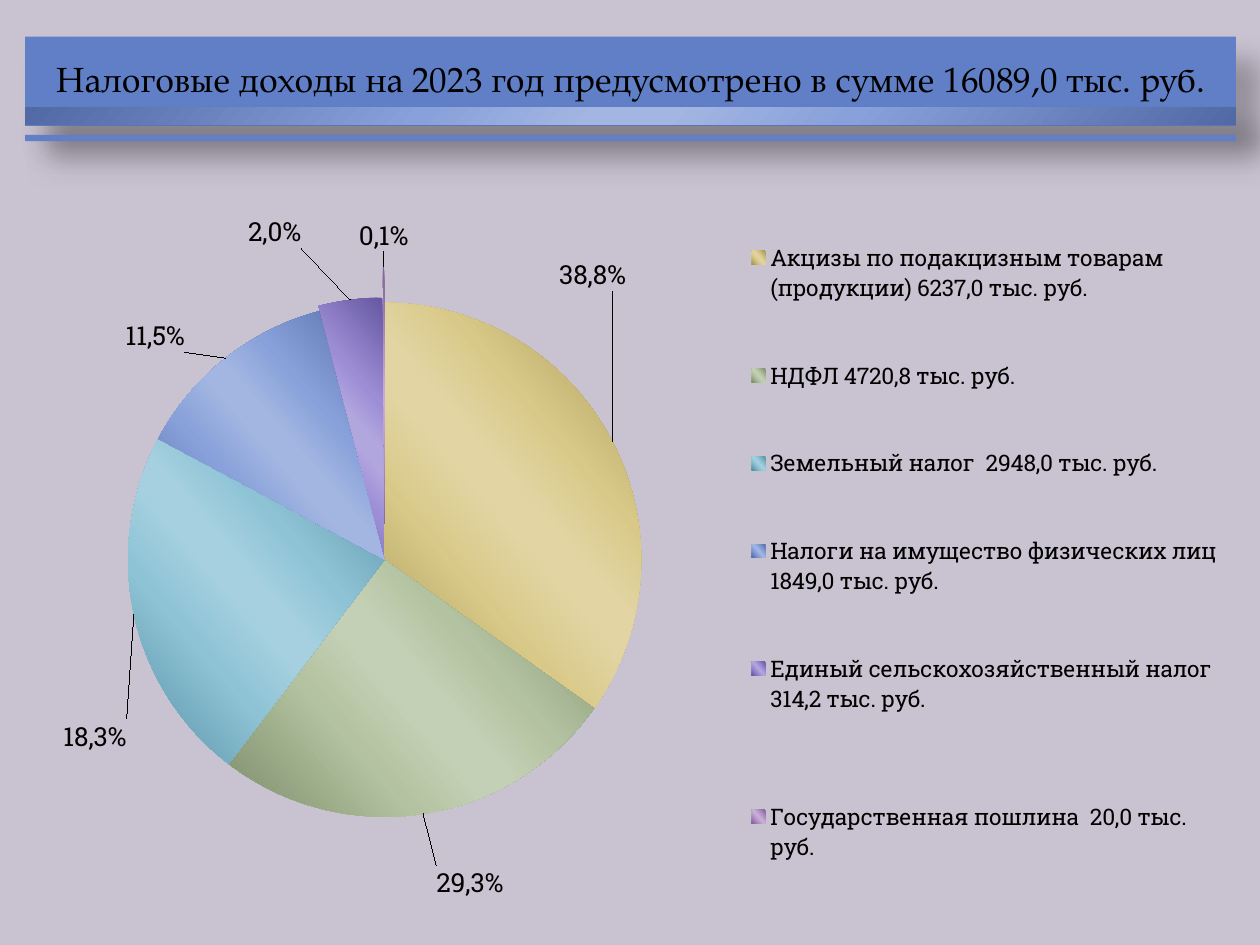
from pptx import Presentation
from pptx.chart.data import CategoryChartData
from pptx.dml.color import RGBColor
from pptx.enum.chart import XL_CHART_TYPE, XL_LABEL_POSITION, XL_LEGEND_POSITION
from pptx.enum.shapes import MSO_SHAPE
from pptx.enum.text import MSO_ANCHOR, PP_ALIGN
from pptx.oxml import parse_xml
from pptx.oxml.ns import nsdecls, qn
from pptx.util import Inches, Pt

SERIF, SLAB = "TeX Gyre Pagella", "Roboto Slab"
BLUE = "607FC6"
TITLE = "Налоговые доходы на 2023 год предусмотрено в сумме 16089,0 тыс. руб."

# category, value, label, colour, explosion %, label shift as a share of the chart
TAXES = [
    ("Акцизы по подакцизным товарам (продукции) 6237,0 тыс. руб.",
     34.8, "38,8%", "CEB966", 0, (-0.05, -0.2)),
    ("НДФЛ 4720,8 тыс. руб.", 25.6, "29,3%", "9CB084", 0, (0.01, 0.06)),
    ("Земельный налог  2948,0 тыс. руб.", 22.4, "18,3%", "6BB1C9", 0, (0, 0.14)),
    ("Налоги на имущество физических лиц 1849,0 тыс. руб.",
     13.1, "11,5%", "6585CF", 0, (-0.03, 0)),
    ("Единый сельскохозяйственный налог 314,2 тыс. руб. \n",
     4, "2,0%", "7E6BC9", 2, (-0.04, -0.06)),
    ("Государственная пошлина  20,0 тыс. руб.", 0.1, "0,1%", "A379BB", 14, (0, -0.01)),
]


def rgb(color):
    return RGBColor.from_string(color)


def mix(color, target, share):
    """Blend a hex colour towards a grey level (0 black, 255 white)."""
    parts = (int(color[i:i + 2], 16) for i in (0, 2, 4))
    return "".join(f"{round(v + (target - v) * share):02X}" for v in parts)


def set_sheen(fill, spPr, color, angle):
    """Fill with a gradient that is dark at both ends and light in the middle."""
    fill.gradient()
    dark, mid, light = mix(color, 0, 0.2), mix(color, 255, 0.23), mix(color, 255, 0.4)
    stops = zip((0, 33, 47, 53, 68, 100), (dark, mid, light, light, mid, dark))
    gs = "".join(f'<a:gs pos="{pos * 1000}"><a:srgbClr val="{c}"/></a:gs>'
                 for pos, c in stops)
    grad = spPr.find(qn("a:gradFill"))
    grad.getparent().replace(grad, parse_xml(
        f'<a:gradFill {nsdecls("a")} rotWithShape="1"><a:gsLst>{gs}</a:gsLst>'
        f'<a:lin ang="{angle * 60000}" scaled="1"/></a:gradFill>'))


def add_bar(slide, left, top, width, height):
    sp = slide.shapes.add_shape(MSO_SHAPE.RECTANGLE, Inches(left), Inches(top),
                                Inches(width), Inches(height))
    sp.fill.solid()
    sp.fill.fore_color.rgb = rgb(BLUE)
    sp.line.fill.background()
    sp._element.spPr.append(parse_xml(
        f'<a:effectLst {nsdecls("a")}><a:outerShdw blurRad="{Pt(15)}" dist="{Pt(18)}" '
        f'dir="{45 * 60000}" rotWithShape="0"><a:srgbClr val="000000">'
        '<a:alpha val="26000"/></a:srgbClr></a:outerShdw></a:effectLst>'))
    return sp


def add_banner(slide, left, top, width, height):
    tf = add_bar(slide, left, top, width, height - 0.12).text_frame
    tf.word_wrap = True
    tf.vertical_anchor = MSO_ANCHOR.MIDDLE
    tf.margin_left = tf.margin_right = tf.margin_top = tf.margin_bottom = Inches(0.08)
    p = tf.paragraphs[0]
    p.text = TITLE
    p.alignment = PP_ALIGN.CENTER
    p.line_spacing = 0.9
    p.font.size, p.font.name, p.font.color.rgb = Pt(20), SERIF, rgb("000000")

    strip = add_bar(slide, left, top + height - 0.27, width, 0.14)
    set_sheen(strip.fill, strip._element.spPr, "6585CF", 41)
    add_bar(slide, left, top + height - 0.05, width, 0.05)


def manual_layout(x, y, w=None, h=None, inner=False):
    """Chart layout; without a size, x and y shift a label from its usual place."""
    tags = []
    if inner:
        tags.append(("layoutTarget", "inner"))
    if w is not None:
        tags += [("xMode", "edge"), ("yMode", "edge")]
    tags += [("x", x), ("y", y)]
    if w is not None:
        tags += [("w", w), ("h", h)]
    body = "".join(f'<c:{tag} val="{val}"/>' for tag, val in tags)
    return parse_xml(f'<c:layout {nsdecls("c")}><c:manualLayout>{body}'
                     '</c:manualLayout></c:layout>')


def set_layout(parent, layout, index):
    for old in parent.findall(qn("c:layout")):
        parent.remove(old)
    parent.insert(index, layout)


def style_slice(series, index, tax):
    _, _, text, color, explosion, shift = tax
    point = series.points[index]
    point.format.line.fill.background()
    spPr = series._element.get_or_add_dPt_for_point(index).find(qn("c:spPr"))
    set_sheen(point.format.fill, spPr, color, 139)
    spPr.addprevious(parse_xml(f'<c:explosion {nsdecls("c")} val="{explosion}"/>'))

    label = point.data_label
    p = label.text_frame.paragraphs[0]
    p.text = text
    p.font.size, p.font.name, p.font.color.rgb = Pt(15), SLAB, rgb("000000")
    label.position = XL_LABEL_POSITION.OUTSIDE_END
    set_layout(label._dLbl, manual_layout(*shift), 1)


def add_tax_pie(slide, left, top, width, height):
    data = CategoryChartData()
    data.categories = [tax[0] for tax in TAXES]
    data.add_series("Series 1", [tax[1] for tax in TAXES])
    chart = slide.shapes.add_chart(XL_CHART_TYPE.PIE, Inches(left), Inches(top),
                                   Inches(width), Inches(height), data).chart
    chart.has_title = False
    chart.font.size, chart.font.name = Pt(18), SERIF
    chart.font.color.rgb = rgb("000000")

    chart.has_legend = True
    legend = chart.legend
    legend.position = XL_LEGEND_POSITION.RIGHT
    legend.include_in_layout = False
    legend.font.size, legend.font.name = Pt(13), SLAB
    legend.font.color.rgb = rgb("000000")
    set_layout(legend._element, manual_layout(0.6, 0, 0.4, 1), 1)

    plot = chart.plots[0]
    plot.vary_by_categories = True
    set_layout(plot._element.getparent(),
               manual_layout(0.08, 0.16, 0.44, 0.7, inner=True), 0)
    series = plot.series[0]
    labels = series.data_labels
    labels.show_value = True
    labels.number_format, labels.number_format_is_linked = "0.0%", False
    labels.position = XL_LABEL_POSITION.OUTSIDE_END
    labels.font.size, labels.font.name = Pt(15), SLAB
    for i, tax in enumerate(TAXES):
        style_slice(series, i, tax)
    leader = labels._element.find(qn("c:showLeaderLines"))
    if leader is None:
        labels._element.append(parse_xml(
            f'<c:showLeaderLines {nsdecls("c")} val="1"/>'))
    else:
        leader.set("val", "1")


def main():
    prs = Presentation()
    prs.slide_width, prs.slide_height = Inches(10), Inches(7.5)
    slide = prs.slides.add_slide(prs.slide_layouts[6])
    slide.background.fill.solid()
    slide.background.fill.fore_color.rgb = rgb("C9C2D1")
    add_tax_pie(slide, 0.2, 1.47, 9.53, 5.83)
    add_banner(slide, 0.2, 0.29, 9.61, 0.83)
    prs.save("out.pptx")


if __name__ == "__main__":
    main()
